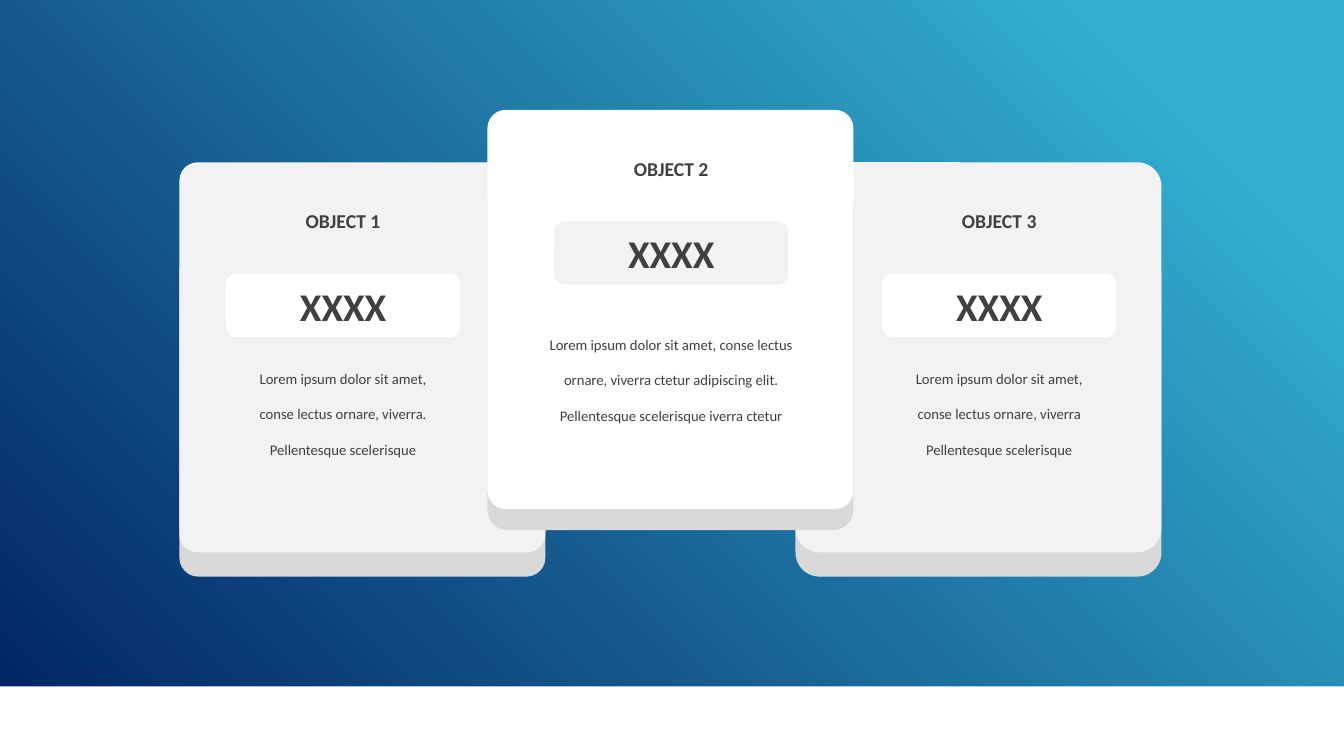
from dataclasses import dataclass

from lxml import etree
from pptx import Presentation
from pptx.dml.color import RGBColor
from pptx.enum.shapes import MSO_SHAPE
from pptx.enum.text import MSO_ANCHOR, MSO_AUTO_SIZE, PP_ALIGN
from pptx.oxml.ns import qn
from pptx.util import Inches, Pt

RECTANGLE = MSO_SHAPE.RECTANGLE
ROUNDED = MSO_SHAPE.ROUNDED_RECTANGLE
CENTER = PP_ALIGN.CENTER
TOP, MIDDLE = MSO_ANCHOR.TOP, MSO_ANCHOR.MIDDLE
FIT_TEXT = MSO_AUTO_SIZE.SHAPE_TO_FIT_TEXT

SLIDE_WIDTH, SLIDE_HEIGHT = Inches(13.33), Inches(7.5)
FONT = "Calibri"
INK, WHITE, PALE, SHADE = "404040", "FFFFFF", "F2F2F2", "D9D9D9"
SKY, NAVY = "33AFD2", "002060"

CARD_LEFT, CARD_STEP, CARD_WIDTH = 13.35, 22.92, 27.23
CONTENT_CENTER, CONTENT_STEP = 25.53, 24.41
TITLE_OFFSET, VALUE_OFFSET = 5.53, 14.73
TITLE_WIDTH, TITLE_HEIGHT = 13.13, 4.53
VALUE_WIDTH, VALUE_HEIGHT = 17.4, 8.4
BODY_HEIGHT = 14.93


@dataclass(frozen=True)
class Area:
    left: float
    top: float
    width: float
    height: float

    def lengths(self) -> tuple[int, int, int, int]:
        return (
            round(SLIDE_WIDTH * self.left / 100),
            round(SLIDE_HEIGHT * self.top / 100),
            round(SLIDE_WIDTH * self.width / 100),
            round(SLIDE_HEIGHT * self.height / 100),
        )


@dataclass(frozen=True)
class Card:
    column: int
    body: str
    top: float = 21.47
    height: float = 51.6
    base_top: float = 33.2
    base_height: float = 43.07
    rounding: float = 0.05
    base_rounding: float = 0.058
    face: str = PALE
    value_face: str = WHITE
    body_offset: float = 24.47
    body_width: float = 16.13


CARDS = [
    Card(0, "Lorem ipsum dolor sit amet, conse lectus ornare, viverra. "
            "Pellentesque scelerisque"),
    Card(2, "Lorem ipsum dolor sit amet, conse lectus ornare, viverra "
            "Pellentesque scelerisque",
         rounding=0.066, base_rounding=0.074),
    Card(1, "Lorem ipsum dolor sit amet, conse lectus ornare, viverra ctetur "
            "adipiscing elit. Pellentesque scelerisque iverra ctetur",
         top=14.53, height=52.8, base_top=24, base_height=46.13,
         face=WHITE, value_face=PALE, body_offset=26.93, body_width=21.9),
]


def color(value: str) -> RGBColor:
    return RGBColor.from_string(value)


def add_panel(slide, area: Area, fill: str, kind=ROUNDED, rounding: float | None = None):
    panel = slide.shapes.add_shape(kind, *area.lengths())
    panel.shadow.inherit = False
    panel.line.fill.background()
    panel.fill.solid()
    panel.fill.fore_color.rgb = color(fill)
    if rounding is not None:
        panel.adjustments[0] = rounding
    return panel


def write(holder, text: str, *, size: float, bold: bool = False,
          spacing: float | None = None, anchor=TOP) -> None:
    frame = holder.text_frame
    frame.word_wrap = True
    frame.auto_size = FIT_TEXT
    frame.vertical_anchor = anchor
    paragraph = frame.paragraphs[0]
    paragraph.alignment = CENTER
    if spacing is not None:
        paragraph.line_spacing = spacing
    run = paragraph.add_run()
    run.text = text
    run.font.name = FONT
    run.font.size = Pt(size)
    run.font.bold = bold
    run.font.color.rgb = color(INK)


def add_backdrop(slide) -> None:
    backdrop = add_panel(slide, Area(0, 0, 100, 100), NAVY, RECTANGLE)
    backdrop.fill.gradient()
    near, far = backdrop.fill.gradient_stops
    near.color.rgb, near.position = color(SKY), 0.12
    far.color.rgb, far.position = color(NAVY), 1
    gradient = backdrop.fill._xPr.find(qn("a:gradFill"))
    linear = gradient.find(qn("a:lin"))
    radial = etree.Element(qn("a:path"), {"path": "circle"})
    etree.SubElement(radial, qn("a:fillToRect"), {"l": "100000", "b": "100000"})
    gradient.replace(linear, radial)


def add_card(slide, card: Card) -> None:
    left = CARD_LEFT + card.column * CARD_STEP
    center = CONTENT_CENTER + card.column * CONTENT_STEP

    def centered(offset: float, width: float, height: float) -> Area:
        return Area(center - width / 2, card.top + offset, width, height)

    add_panel(slide, Area(left, card.base_top, CARD_WIDTH, card.base_height),
              SHADE, rounding=card.base_rounding)
    add_panel(slide, Area(left, card.top, CARD_WIDTH, card.height),
              card.face, rounding=card.rounding)

    title_area = centered(TITLE_OFFSET, TITLE_WIDTH, TITLE_HEIGHT)
    title = slide.shapes.add_textbox(*title_area.lengths())
    write(title, f"OBJECT {card.column + 1}", size=14, bold=True)

    value = add_panel(slide, centered(VALUE_OFFSET, VALUE_WIDTH, VALUE_HEIGHT),
                      card.value_face)
    write(value, "XXXX", size=28, bold=True, anchor=MIDDLE)

    body_area = centered(card.body_offset, card.body_width, BODY_HEIGHT)
    body = slide.shapes.add_textbox(*body_area.lengths())
    write(body, card.body, size=10.5, spacing=2.0)


def main() -> None:
    deck = Presentation()
    deck.slide_width, deck.slide_height = SLIDE_WIDTH, SLIDE_HEIGHT
    slide = deck.slides.add_slide(deck.slide_layouts[6])
    add_backdrop(slide)
    for card in CARDS:
        add_card(slide, card)
    add_panel(slide, Area(0, 90.8, 100, 9.2), WHITE, RECTANGLE)
    deck.save("out.pptx")


if __name__ == "__main__":
    main()
